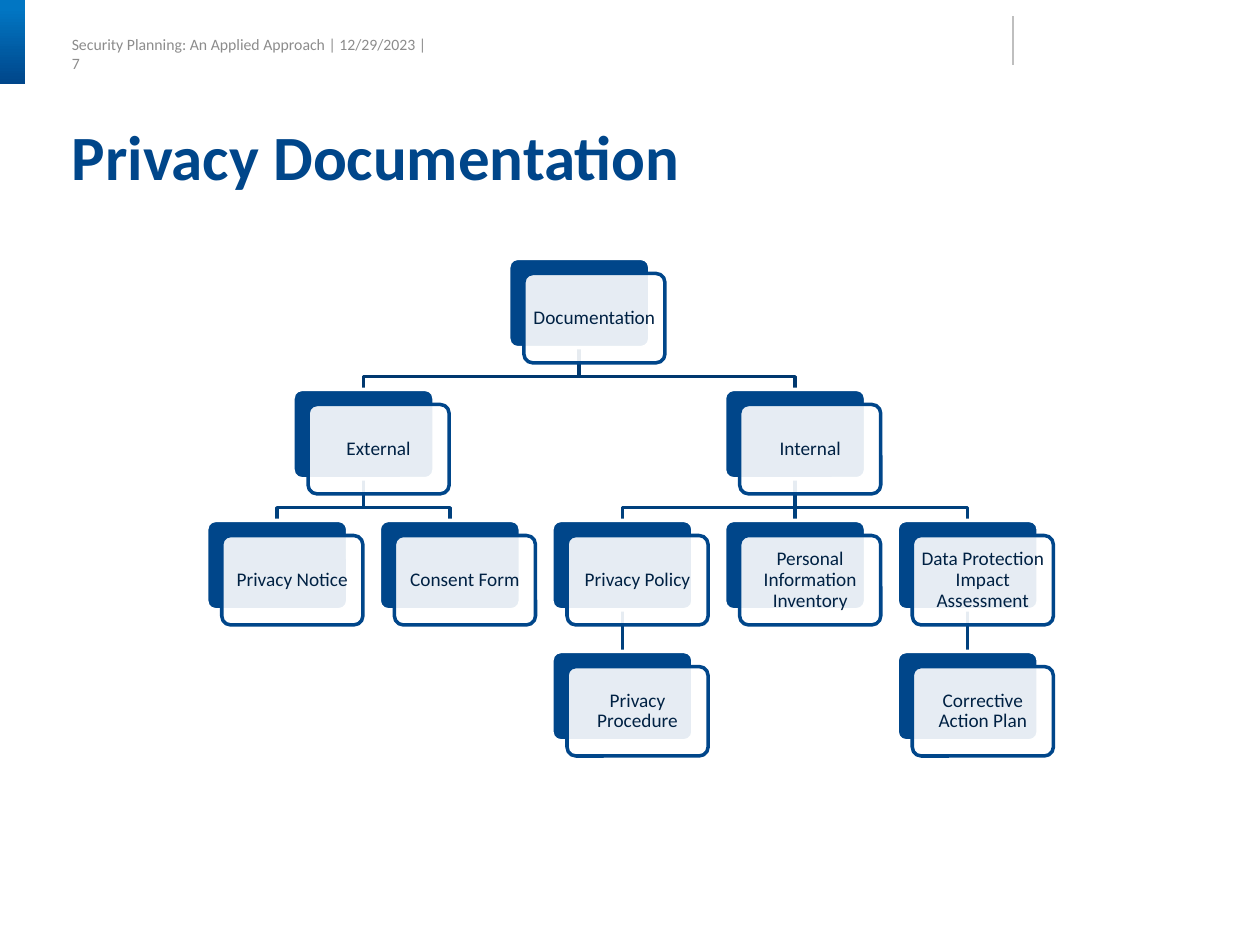
from dataclasses import dataclass

from lxml.etree import SubElement
from pptx import Presentation
from pptx.dml.color import RGBColor
from pptx.enum.shapes import MSO_CONNECTOR, MSO_SHAPE
from pptx.enum.text import MSO_ANCHOR, MSO_AUTO_SIZE, PP_ALIGN
from pptx.oxml.ns import qn
from pptx.util import Inches, Pt

FONT = "Calibri"
NAVY, WHITE, CARD_TEXT = "00468A", "FFFFFF", "002143"
ROOT_LINK, LINK = "00386F", "00407D"
FIRST_CENTER, COLUMN_PITCH = 2.2, 1.37
FIRST_TOP, LEVEL_PITCH = 2.05, 1.04
CARD_WIDTH, CARD_HEIGHT = 1.12, 0.71
FRONT_OFFSET = 0.12
BEND = 0.1  # height of a link's bend above the lower card


@dataclass(frozen=True)
class Node:
    text: str
    column: float
    level: int
    children: tuple["Node", ...] = ()

    @property
    def center(self) -> float:
        return FIRST_CENTER + COLUMN_PITCH * self.column

    @property
    def top(self) -> float:
        return FIRST_TOP + LEVEL_PITCH * self.level


TREE = Node("Documentation", 1.75, 0, (
    Node("External", 0.5, 1, (
        Node("Privacy Notice", 0, 2),
        Node("Consent Form", 1, 2),
    )),
    Node("Internal", 3, 1, (
        Node("Privacy Policy", 2, 2, (Node("Privacy Procedure", 2, 3),)),
        Node("Personal Information Inventory", 3, 2),
        Node("Data Protection Impact Assessment", 4, 2, (
            Node("Corrective Action Plan", 4, 3),
        )),
    )),
))


def color(value: str) -> RGBColor:
    return RGBColor.from_string(value)


def set_line(line, value: str, width: float) -> None:
    line.color.rgb = color(value)
    line.width = Pt(width)


def style_text(paragraph, size: float, value: str, align=PP_ALIGN.LEFT) -> None:
    paragraph.alignment = align
    paragraph.font.name = FONT
    paragraph.font.size = Pt(size)
    paragraph.font.color.rgb = color(value)


def set_insets(frame, left: float, top: float, right: float, bottom: float) -> None:
    frame.margin_left, frame.margin_top = Inches(left), Inches(top)
    frame.margin_right, frame.margin_bottom = Inches(right), Inches(bottom)


def add_straight(shapes, x: float, top: float, bottom: float,
                 value: str, width: float) -> None:
    connector = shapes.add_connector(
        MSO_CONNECTOR.STRAIGHT, Inches(x), Inches(top), Inches(x), Inches(bottom))
    set_line(connector.line, value, width)
    SubElement(connector._element.spPr, qn("a:effectLst"))


def add_link(shapes, parent: Node, child: Node) -> None:
    start = parent.top + CARD_HEIGHT
    value = LINK if parent.level else ROOT_LINK
    if parent.column == child.column:
        add_straight(shapes, parent.center, start, child.top, value, 2)
        return
    bend = child.top - BEND
    builder = shapes.build_freeform(
        Inches(parent.center), Inches(start), scale=1.0)
    corners = [(parent.center, bend), (child.center, bend), (child.center, child.top)]
    builder.add_line_segments(
        [(Inches(x), Inches(y)) for x, y in corners], close=False)
    link = builder.convert_to_shape()
    link.shadow.inherit = False
    link.fill.background()
    set_line(link.line, value, 2)


def add_links(shapes, node: Node) -> None:
    for child in node.children:
        add_link(shapes, node, child)
        add_links(shapes, child)


def add_panel(shapes, left: float, top: float, fill: str, line: str):
    """Add one rounded rectangle of a card."""
    panel = shapes.add_shape(
        MSO_SHAPE.ROUNDED_RECTANGLE, Inches(left), Inches(top),
        Inches(CARD_WIDTH), Inches(CARD_HEIGHT))
    panel.adjustments[0] = 0.1
    panel.shadow.inherit = False
    panel.fill.solid()
    panel.fill.fore_color.rgb = color(fill)
    set_line(panel.line, line, 2)
    return panel


def add_cards(shapes, node: Node) -> None:
    left = node.center - CARD_WIDTH / 2
    add_panel(shapes, left, node.top, NAVY, WHITE)
    front = add_panel(
        shapes, left + FRONT_OFFSET, node.top + FRONT_OFFSET, WHITE, NAVY)
    fill_color = front._element.spPr.find(qn("a:solidFill"))[0]
    SubElement(fill_color, qn("a:alpha"), val="90000")
    frame = front.text_frame
    frame.word_wrap = True
    frame.vertical_anchor = MSO_ANCHOR.MIDDLE
    set_insets(frame, 0.05, 0.05, 0.05, 0.05)
    frame.text = node.text
    paragraph = frame.paragraphs[0]
    paragraph.line_spacing = 0.9
    style_text(paragraph, 11, CARD_TEXT, PP_ALIGN.CENTER)
    for child in node.children:
        add_cards(shapes, child)


def add_header(shapes) -> None:
    box = shapes.add_textbox(Inches(0.57), Inches(0.23), Inches(2.84), Inches(0.23))
    frame = box.text_frame
    frame.word_wrap = False
    frame.vertical_anchor = MSO_ANCHOR.MIDDLE
    set_insets(frame, 0, 0.2, 0, 0.04)
    frame.text = "Security Planning: An Applied Approach | 12/29/2023 | 7"
    style_text(frame.paragraphs[0], 9, "8C8C8C")

    accent = shapes.add_shape(
        MSO_SHAPE.RECTANGLE, 0, 0, Inches(0.2), Inches(0.67))
    accent.shadow.inherit = False
    accent.line.fill.background()
    accent.fill.gradient()
    accent.fill.gradient_angle = 270
    stops = ((0.1, "0176C3"), (1, NAVY))
    for stop, (position, value) in zip(accent.fill.gradient_stops, stops):
        stop.position = position
        stop.color.rgb = color(value)

    add_straight(shapes, 8.04, 0.13, 0.52, "BFBFBF", 0.75)


def set_title(title) -> None:
    title.left, title.top = Inches(0.57), Inches(1)
    title.width, title.height = Inches(8.92), Inches(0.55)
    frame = title.text_frame
    frame.text = "Privacy Documentation"
    frame.vertical_anchor = MSO_ANCHOR.TOP
    frame.auto_size = MSO_AUTO_SIZE.SHAPE_TO_FIT_TEXT
    set_insets(frame, 0, 0, 0, 0)
    paragraph = frame.paragraphs[0]
    paragraph.line_spacing = 0.9
    style_text(paragraph, 36, NAVY)
    paragraph.font.bold = True


def main() -> None:
    presentation = Presentation()
    presentation.slide_width, presentation.slide_height = Inches(10), Inches(7.5)
    slide = presentation.slides.add_slide(presentation.slide_layouts[5])
    add_header(slide.shapes)
    set_title(slide.shapes.title)
    add_links(slide.shapes, TREE)
    add_cards(slide.shapes, TREE)
    presentation.save("out.pptx")


if __name__ == "__main__":
    main()
